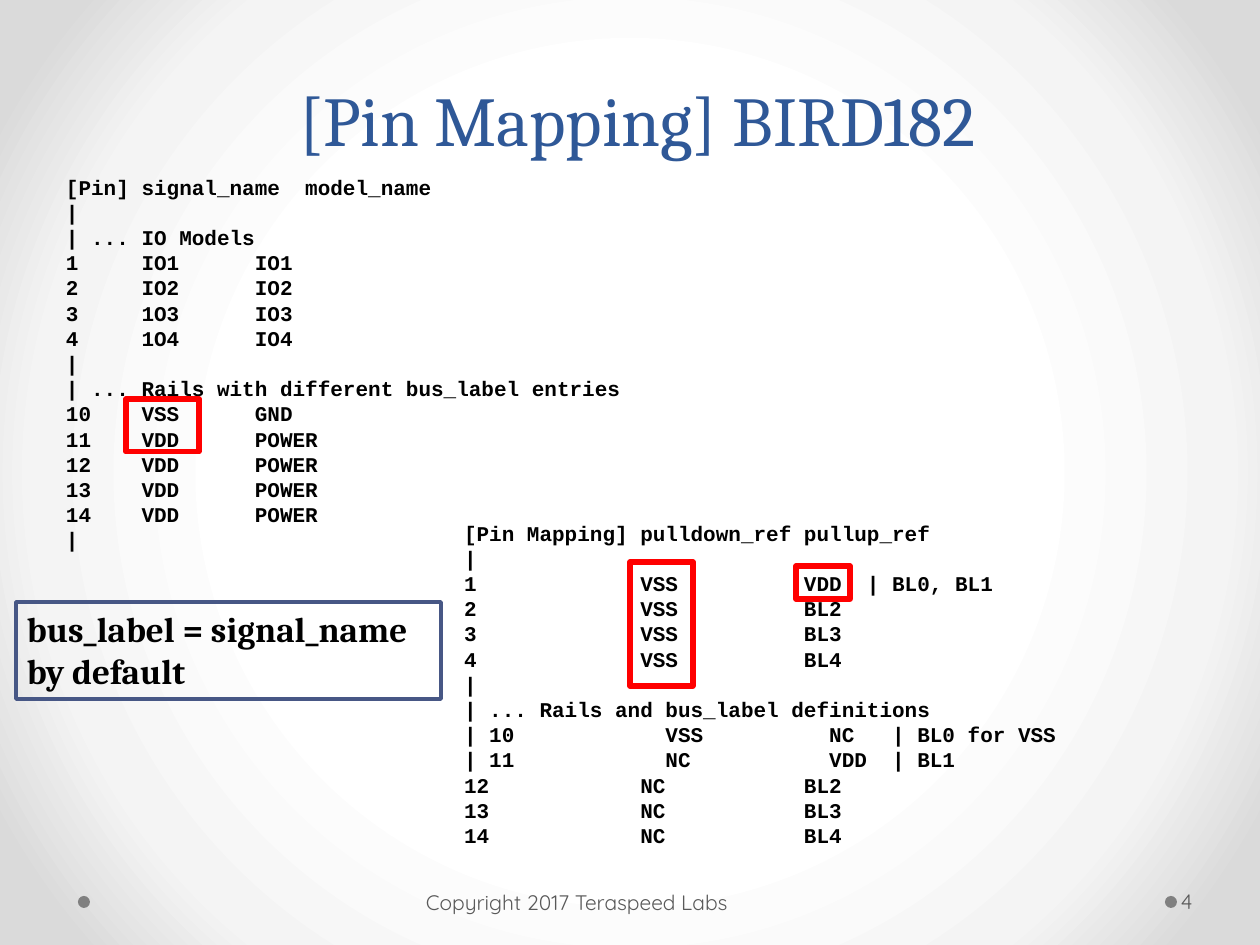
"""Build the [Pin Mapping] BIRD182 slide."""
from pptx import Presentation
from pptx.dml.color import RGBColor as RGB
from pptx.enum.shapes import MSO_SHAPE as SHAPE
from pptx.enum.text import MSO_ANCHOR as ANCHOR, PP_ALIGN as ALIGN
from pptx.oxml import parse_xml
from pptx.oxml.ns import nsdecls, qn
from pptx.util import Emu, Pt

COLORS = {"title": "2F5897", "text": "000000", "footer": "595959", "dot": "808080",
          "mark": "FF0000", "frame": "475785",
          "center": "FFFFFF", "middle": "F4F4F4", "edge": "DADADA"}
PIN_LINES = """[Pin] signal_name  model_name
|
| ... IO Models
1     IO1      IO1
2     IO2      IO2
3     1O3      IO3
4     1O4      IO4
|
| ... Rails with different bus_label entries
10    VSS      GND
11    VDD      POWER
12    VDD      POWER
13    VDD      POWER
14    VDD      POWER
|"""
MAPPING_LINES = """[Pin Mapping] pulldown_ref pullup_ref
|
1             VSS          VDD  | BL0, BL1
2             VSS          BL2
3             VSS          BL3
4             VSS          BL4
|
| ... Rails and bus_label definitions
| 10            VSS          NC   | BL0 for VSS
| 11            NC           VDD  | BL1
12            NC           BL2
13            NC           BL3
14            NC           BL4"""


def px(*values):
    return [Emu(round(v * 914400 / 126)) for v in values]


def add_text(text, box, font="Courier New", size=12, color="text", bold=False,
             align=ALIGN.LEFT, anchor=ANCHOR.TOP, insets=(13, 6, 13, 6), spacing=None):
    tf = s.shapes.add_textbox(*px(*box)).text_frame
    tf.word_wrap = True
    tf.vertical_anchor = anchor
    tf.margin_left, tf.margin_top, tf.margin_right, tf.margin_bottom = px(*insets)
    for i, line in enumerate(text.split("\n")):
        p = tf.paragraphs[0] if i == 0 else tf.add_paragraph()
        p.alignment = align
        p.line_spacing = spacing
        r = p.add_run()
        r.text = line
        r.font.name, r.font.size, r.font.bold = font, Pt(size), bold
        r.font.color.rgb = RGB.from_string(COLORS[color])


prs = Presentation()
prs.slide_width, prs.slide_height = px(1260, 945)
s = prs.slides.add_slide(prs.slide_layouts[6])

s.background.fill.solid()
bg = s._element.find(".//" + qn("p:bgPr"))
stops = "".join(f'<a:gs pos="{pos}000"><a:srgbClr val="{COLORS[name]}"/></a:gs>'
                for pos, name in ((50, "center"), (76, "middle"), (92, "edge")))
bg.replace(bg[0], parse_xml(
    f'<a:gradFill {nsdecls("a")} rotWithShape="1"><a:gsLst>{stops}</a:gsLst>'
    '<a:path path="circle"><a:fillToRect l="50000" t="50000" r="50000" b="50000"/>'
    '</a:path></a:gradFill>'))

for left in (78, 1165):
    sp = s.shapes.add_shape(SHAPE.OVAL, *px(left, 896, 12, 12))
    sp.shadow.inherit = False
    sp.fill.solid()
    sp.fill.fore_color.rgb = RGB.from_string(COLORS["dot"])
    sp.line.fill.background()

add_text(" [Pin Mapping] BIRD182", (63, 0, 1134, 220), font="Cambria", size=40,
         color="title", align=ALIGN.CENTER, anchor=ANCHOR.MIDDLE, spacing=Pt(58))
add_text("4", (1177, 876, 77, 50), font="Quicksand", color="footer",
         anchor=ANCHOR.MIDDLE, insets=(4, 6, 6, 6))
add_text("Copyright 2017 Teraspeed Labs", (420, 877, 392, 50), font="Quicksand",
         color="footer", anchor=ANCHOR.MIDDLE, insets=(6, 6, 13, 6))
add_text(PIN_LINES, (53, 168, 662, 394), bold=True)
add_text(MAPPING_LINES, (451, 514, 735, 344), bold=True)
add_text("bus_label = signal_name by default", (14, 601, 427, 97), font="Cambria",
         size=20, bold=True)

for box, color, width in (((630, 562, 63, 124), "mark", 3),
                          ((796, 566, 54, 33), "mark", 3),
                          ((126, 399, 73, 53), "mark", 3),
                          ((16, 602, 425, 97), "frame", 2.25)):
    sp = s.shapes.add_shape(SHAPE.RECTANGLE, *px(*box))
    sp.shadow.inherit = False
    sp.fill.background()
    sp.line.color.rgb = RGB.from_string(COLORS[color])
    sp.line.width = Pt(width)

prs.save("out.pptx")
